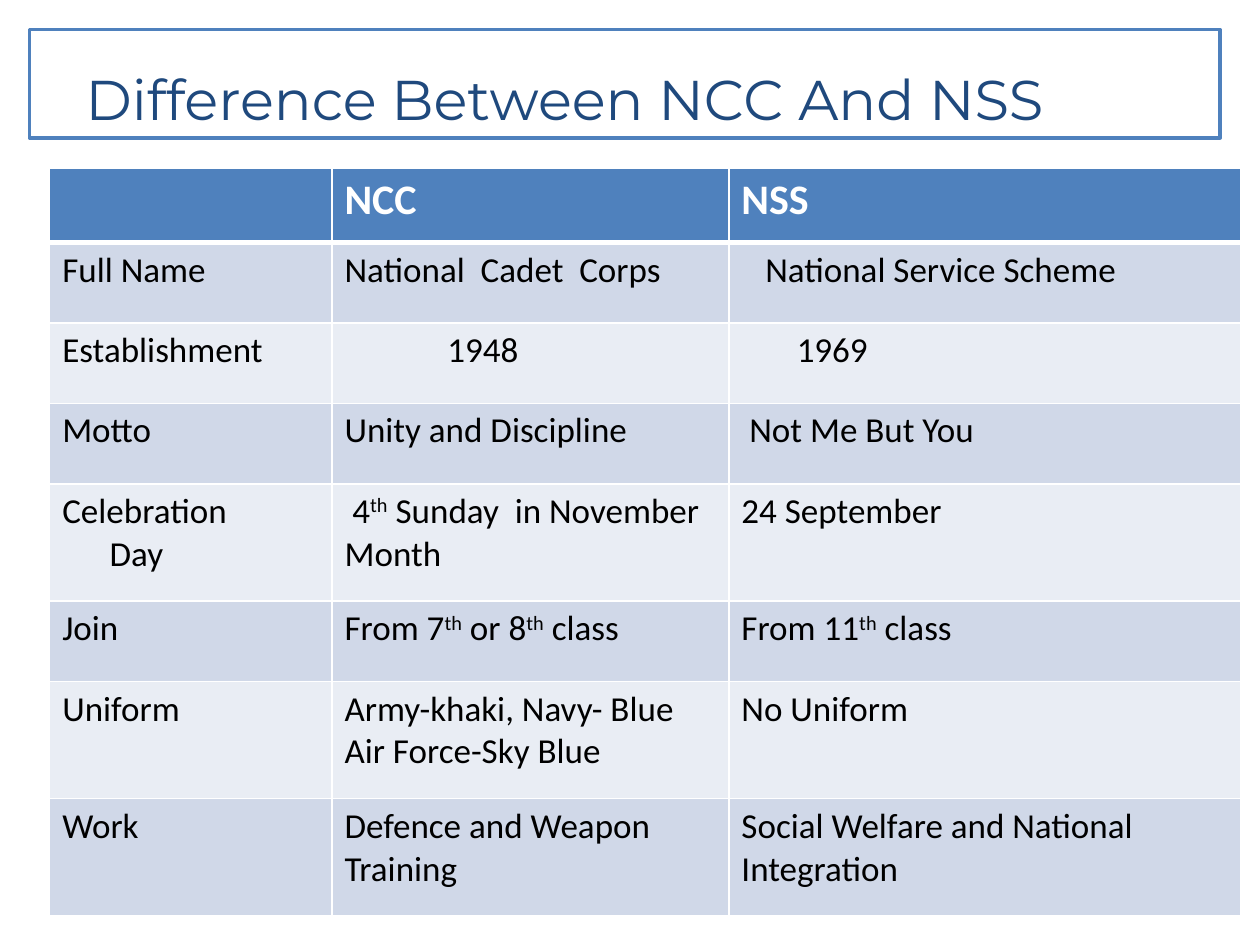
from pptx import Presentation
from pptx.dml.color import RGBColor
from pptx.enum.shapes import MSO_SHAPE
from pptx.enum.text import MSO_ANCHOR, PP_ALIGN
from pptx.oxml.ns import qn
from pptx.util import Pt
from lxml import etree

RECTANGLE = MSO_SHAPE.RECTANGLE
BOTTOM = MSO_ANCHOR.BOTTOM
LEFT = PP_ALIGN.LEFT

BLUE, NAVY, WHITE, BLACK = "4F81BD", "1F497D", "FFFFFF", "000000"
BANDS = ("D0D8E8", "E9EDF4")

TITLE_FORMAT = {"name": "Montserrat", "size": Pt(32), "color": NAVY, "bold": False}
HEADER_FORMAT = {"name": "Calibri", "size": Pt(24), "color": WHITE, "bold": True}
BODY_FORMAT = {"name": "Calibri", "size": Pt(20), "color": BLACK, "bold": False}

COLUMN_WIDTHS = (161.3, 226.8, 292.3)
HEADER_HEIGHT, SHORT_HEIGHT, TALL_HEIGHT = 42.5, 46, 67

# Text between carets is raised; each line of a cell is one paragraph.
ROWS = [
    (HEADER_HEIGHT, ("", "NCC", "NSS")),
    (SHORT_HEIGHT, ("Full Name", "National  Cadet  Corps", "National Service Scheme")),
    (SHORT_HEIGHT, ("Establishment", "1948", "1969")),
    (SHORT_HEIGHT, ("Motto", "Unity and Discipline", "Not Me But You")),
    (TALL_HEIGHT, ("Celebration\nDay", "4^th^ Sunday  in November Month", "24 September")),
    (SHORT_HEIGHT, ("Join", "From 7^th^ or 8^th^ class", "From 11^th^ class")),
    (TALL_HEIGHT, ("Uniform", "Army-khaki, Navy- Blue\nAir Force-Sky Blue", "No Uniform")),
    (TALL_HEIGHT, ("Work", "Defence and Weapon Training",
                   "Social Welfare and National Integration")),
]

# First-line indents in points, by (row, column, line)
INDENTS = {(1, 2, 0): 13.6, (2, 1, 0): 58.8, (2, 2, 0): 31.6,
           (3, 2, 0): 4.5, (4, 0, 1): 27, (4, 1, 0): 4.5}


def color(value):
    return RGBColor.from_string(value)


def format_font(font, values):
    for name, value in values.items():
        if name == "color":
            font.color.rgb = color(value)
        else:
            setattr(font, name, value)


def write_paragraph(paragraph, text, values, indent=0):
    """Write text, raising the parts between carets."""
    paragraph.alignment = LEFT
    if indent:
        paragraph._p.get_or_add_pPr().set("indent", str(Pt(indent)))
    for index, part in enumerate(text.split("^")):
        run = paragraph.add_run()
        run.text = part
        format_font(run.font, values)
        if index % 2:
            run.font._element.set("baseline", "30000")


def add_title(slide, left, top, width, height):
    shape = slide.shapes.add_shape(RECTANGLE, Pt(left), Pt(top), Pt(width), Pt(height))
    shape.shadow.inherit = False
    shape.fill.solid()
    shape.fill.fore_color.rgb = color(WHITE)
    shape.line.color.rgb = color(BLUE)
    shape.line.width = Pt(2)
    frame = shape.text_frame
    frame.word_wrap = True
    frame.vertical_anchor = BOTTOM
    write_paragraph(frame.paragraphs[0], "Difference Between NCC And NSS",
                    TITLE_FORMAT, indent=25)


def set_borders(cell, top, bottom):
    properties = cell._tc.get_or_add_tcPr()
    for side, width in (("L", 1), ("R", 1), ("T", top), ("B", bottom)):
        line = etree.SubElement(properties, qn(f"a:ln{side}"), w=str(Pt(width)))
        fill = etree.SubElement(line, qn("a:solidFill"))
        etree.SubElement(fill, qn("a:srgbClr"), val=WHITE)


def add_comparison(slide, left, top, width):
    height = sum(row_height for row_height, _ in ROWS)
    table = slide.shapes.add_table(len(ROWS), len(COLUMN_WIDTHS), Pt(left), Pt(top),
                                   Pt(width), Pt(height)).table
    for column, column_width in zip(table.columns, COLUMN_WIDTHS):
        column.width = Pt(column_width)
    for row, (row_height, texts) in enumerate(ROWS):
        table.rows[row].height = Pt(row_height)
        values = BODY_FORMAT if row else HEADER_FORMAT
        for column, text in enumerate(texts):
            cell = table.cell(row, column)
            set_borders(cell, top=3 if row == 1 else 1, bottom=1 if row else 3)
            cell.fill.solid()
            cell.fill.fore_color.rgb = color(BANDS[(row - 1) % 2] if row else BLUE)
            if not text:
                continue
            frame = cell.text_frame
            for line, line_text in enumerate(text.split("\n")):
                paragraph = frame.add_paragraph() if line else frame.paragraphs[0]
                write_paragraph(paragraph, line_text, values,
                                INDENTS.get((row, column, line), 0))


def main():
    presentation = Presentation()
    presentation.slide_width, presentation.slide_height = Pt(720), Pt(540)
    slide = presentation.slides.add_slide(presentation.slide_layouts[6])
    add_title(slide, 16.8, 16.8, 680.4, 62)
    add_comparison(slide, 28.4, 96, sum(COLUMN_WIDTHS))
    presentation.save("out.pptx")


if __name__ == "__main__":
    main()
